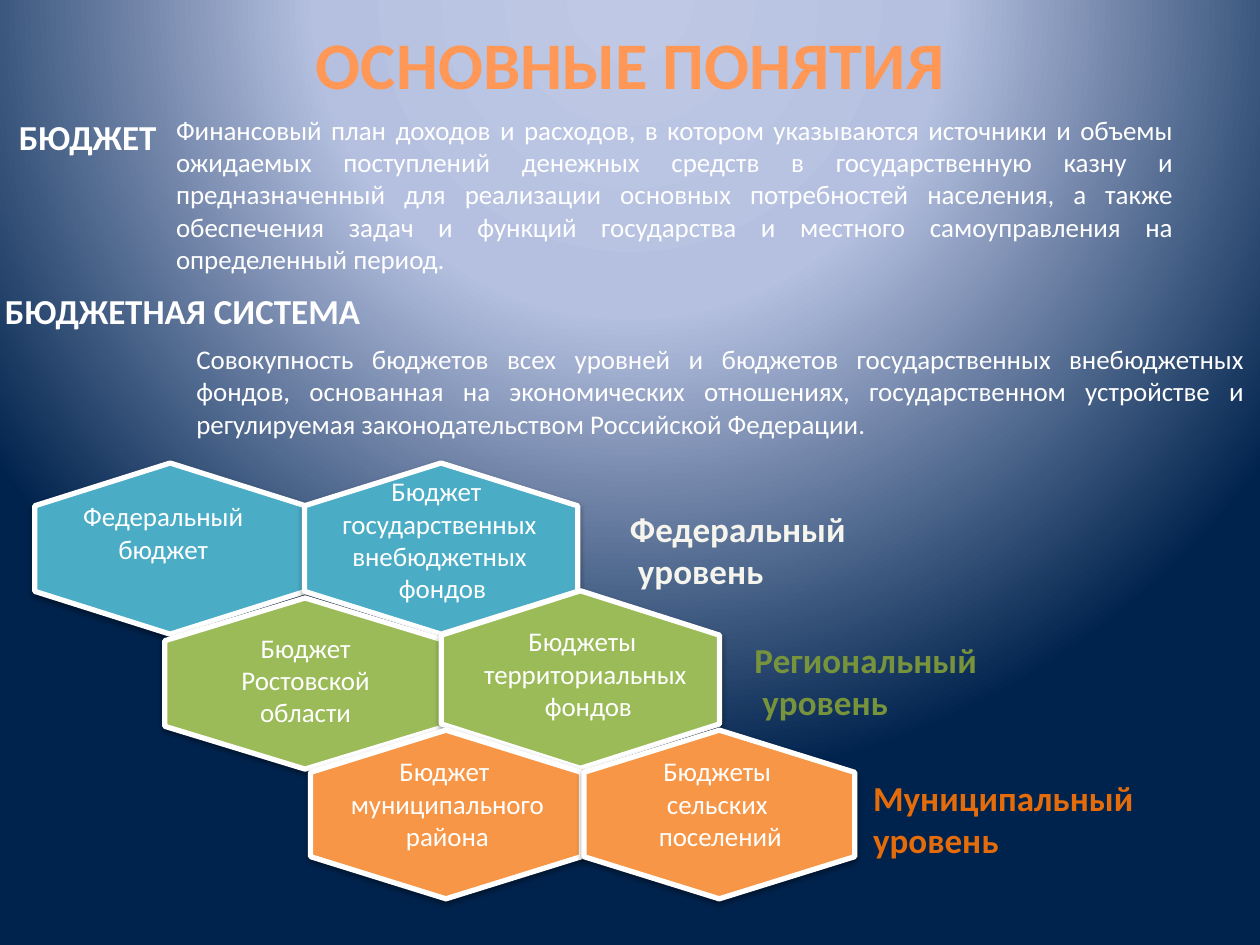
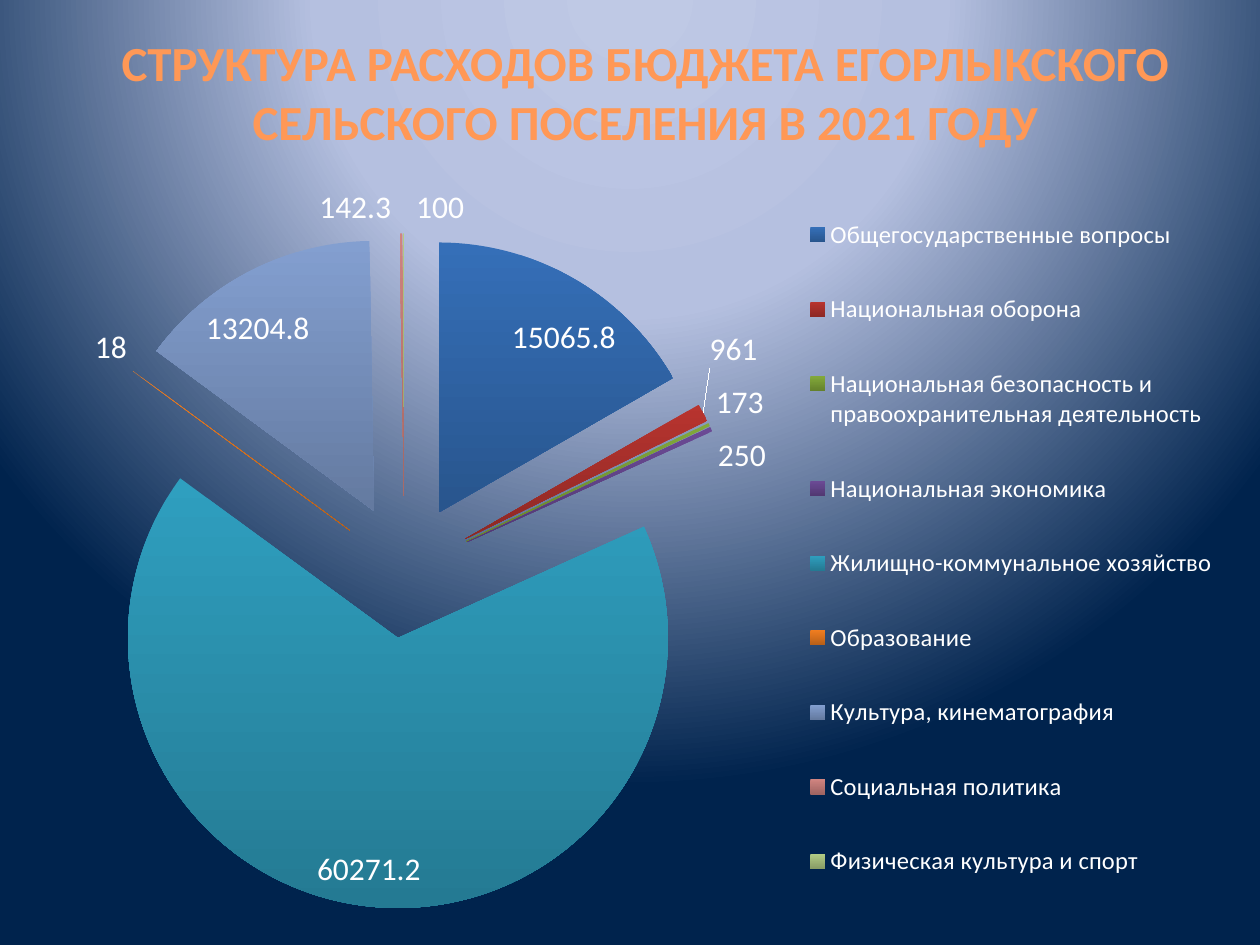
from pptx import Presentation
from pptx.chart.data import CategoryChartData
from pptx.dml.color import RGBColor as RGB
from pptx.enum.chart import XL_CHART_TYPE as Kind, XL_LABEL_POSITION as Spot
from pptx.enum.chart import XL_LEGEND_POSITION as Side
from pptx.enum.shapes import MSO_SHAPE as Form
from pptx.enum.text import MSO_ANCHOR as Anchor, MSO_AUTO_SIZE as Fit
from pptx.enum.text import PP_ALIGN as Align
from pptx.oxml import parse_xml
from pptx.oxml.ns import nsdecls
from pptx.util import Cm, Pt

FONT = "Calibri"
BODY, HEAD = 15.4, 20
WHITE = RGB(0xFF, 0xFF, 0xFF)
PALE = RGB(0xF2, 0xF2, 0xF2)
CREAM = RGB(0xF5, 0xF4, 0xED)
TEAL = RGB(0x4B, 0xAC, 0xC6)
GREEN = RGB(0x9B, 0xBB, 0x59)
ORANGE = RGB(0xF7, 0x96, 0x46)
MOSS = RGB(0x77, 0x93, 0x3C)
RUST = RGB(0xE4, 0x6C, 0x0A)
GLOW = [(0, RGB(0xBF, 0xC9, 0xE5)), (40, RGB(0xB5, 0xC0, 0xE0)),
        (100, RGB(0x00, 0x23, 0x4D))]
FLAME = [(0, RGB(0x9D, 0x47, 0x00)), (78, RGB(0xFF, 0x98, 0x56)),
         (100, RGB(0xFF, 0xF5, 0xF1))]

# Each level: fill, hexagons (centre, size, text centre, lines),
# then the caption (left, top, width, colour, lines).
LEVELS = [
    (TEAL, [
        ((3.43, 11.06), (5.46, 3.45), (3.29, 10.74),
         ["Федеральный", "бюджет"]),
        ((8.89, 11.06), (5.51, 3.45), (8.86, 10.9),
         ["Бюджет ", "государственных", "внебюджетных", " фондов"])],
     (12.45, 10.11, 4.9, CREAM, ["Федеральный", " уровень"])),
    (GREEN, [
        ((6.15, 13.78), (5.66, 3.45), (6.16, 13.72),
         ["Бюджет", "Ростовской", "области"]),
        ((11.7, 13.7), (5.61, 3.58), (11.8, 13.59),
         ["Бюджеты ", "территориальных", " фондов"])],
     (14.96, 12.75, 5.03, MOSS, ["Региональный", " уровень"])),
    (ORANGE, [
        ((8.99, 16.42), (5.46, 3.4), (9.02, 16.21),
         ["Бюджет ", "муниципального", "района"]),
        ((14.5, 16.42), (5.46, 3.4), (14.52, 16.21),
         ["Бюджеты ", "сельских ", "поселений"])],
     (17.35, 15.52, 5.97, RUST, ["Муниципальный", "уровень"])),
]

# Spending item, amount, colour at the top of its slice
COSTS = [
    ("Общегосударственные вопросы", 15065.8, RGB(0x35, 0x6F, 0xB8)),
    ("Национальная оборона", 961, RGB(0xB8, 0x34, 0x2F)),
    ("Национальная безопасность и правоохранительная деятельность", 173,
     RGB(0x82, 0xA8, 0x3A)),
    ("Национальная экономика", 250, RGB(0x6B, 0x4A, 0x95)),
    ("Жилищно-коммунальное хозяйство", 60271.2, RGB(0x2F, 0x9F, 0xBF)),
    ("Образование ", 18, RGB(0xF0, 0x7D, 0x20)),
    ("Культура, кинематография", 13204.8, RGB(0x83, 0x9F, 0xD0)),
    ("Социальная политика", 142.3, RGB(0xD0, 0x84, 0x80)),
    ("Физическая культура и спорт", 100, RGB(0xB2, 0xCC, 0x85)),
]


def blend(stops, tail):
    """Gradient fill element; tail gives its direction."""
    marks = "".join(f'<a:gs pos="{at * 1000}"><a:srgbClr val="{tint}"/></a:gs>'
                    for at, tint in stops)
    return parse_xml(f'<a:gradFill rotWithShape="1" {nsdecls("a")}>'
                     f'<a:gsLst>{marks}</a:gsLst>{tail}</a:gradFill>')


def paint(master):
    """Give every slide the same radial background."""
    master.background.fill.solid()
    old = master.element.xpath(".//p:bgPr/a:solidFill")[0]
    old.getparent().replace(old, blend(
        GLOW, '<a:path path="circle"><a:fillToRect l="50000" t="-80000" '
              'r="50000" b="180000"/></a:path>'))


def write(par, text, size, color=None, bold=None):
    run = par.add_run()
    run.text = text
    font = run.font
    font.name, font.size, font.bold = FONT, Pt(size), bold
    if color is not None:
        font.fill.solid()
        font.fill.fore_color.rgb = color
    return run


def title(slide, text, size, left, top, width, height):
    head = slide.shapes.title
    head.left, head.top = Cm(left), Cm(top)
    head.width, head.height = Cm(width), Cm(height)
    frame = head.text_frame
    frame.auto_size = Fit.NONE
    frame.vertical_anchor = Anchor.MIDDLE
    par = frame.paragraphs[0]
    par.alignment = Align.CENTER
    run = write(par, text, size, bold=True)
    run.font._element.insert(
        0, blend(FLAME, '<a:lin ang="5400000" scaled="0"/>'))


def tall(count, size):
    """Height in cm of a text box with this many lines."""
    return count * size * 0.043 + 0.25


def block(slide, left, top, width, lines, size=BODY, color=WHITE,
          bold=None, align=Align.LEFT, wrap=False, rows=None):
    box = slide.shapes.add_textbox(Cm(left), Cm(top), Cm(width),
                                   Cm(tall(rows or len(lines), size)))
    frame = box.text_frame
    frame.word_wrap = wrap
    frame.auto_size = Fit.SHAPE_TO_FIT_TEXT
    for i, line in enumerate(lines):
        par = frame.add_paragraph() if i else frame.paragraphs[0]
        par.alignment = align
        write(par, line, size, color, bold)
    return frame


def cell(slide, fill, mid, size, spot, lines):
    """Upright hexagon, with its text centred on spot."""
    (x, y), (wide, high) = mid, size
    hexa = slide.shapes.add_shape(Form.HEXAGON, Cm(x - high / 2),
                                  Cm(y - wide / 2), Cm(high), Cm(wide))
    hexa.rotation = 90
    hexa.fill.solid()
    hexa.fill.fore_color.rgb = fill
    hexa.line.color.rgb = WHITE
    hexa.line.width = Pt(3)
    hexa.shadow.inherit = False
    hexa.element.xpath("./p:spPr/a:effectLst")[0].append(parse_xml(
        f'<a:outerShdw {nsdecls("a")} blurRad="40000" dist="20000" '
        'dir="5400000" rotWithShape="0"><a:srgbClr val="000000">'
        '<a:alpha val="38000"/></a:srgbClr></a:outerShdw>'))
    width = 5.4
    block(slide, spot[0] - width / 2, spot[1] - tall(len(lines), BODY) / 2,
          width, lines, align=Align.CENTER)


def place(x, y, w, h, inner=False):
    """Manual chart layout, in shares of the chart area."""
    target = '<c:layoutTarget val="inner"/>' if inner else ""
    return parse_xml(
        f'<c:layout {nsdecls("c")}><c:manualLayout>{target}'
        '<c:xMode val="edge"/><c:yMode val="edge"/>'
        f'<c:x val="{x}"/><c:y val="{y}"/><c:w val="{w}"/><c:h val="{h}"/>'
        '</c:manualLayout></c:layout>')


def shade(color):
    return RGB(*(int(part * 0.77) for part in color))


def pie(slide, left, top, width, height):
    data = CategoryChartData()
    data.categories = [name for name, _, _ in COSTS]
    data.add_series("Series 1", [cost for _, cost, _ in COSTS])
    chart = slide.shapes.add_chart(Kind.PIE, Cm(left), Cm(top), Cm(width),
                                   Cm(height), data).chart
    chart.has_title = False
    font = chart.font
    font.name, font.size, font.color.rgb = FONT, Pt(18), WHITE

    chart.has_legend = True
    key = chart.legend
    key.position = Side.RIGHT
    key.include_in_layout = False
    key.font.name, key.font.size, key.font.color.rgb = FONT, Pt(14), WHITE

    root = chart.element
    root.xpath(".//c:legend/c:legendPos")[0].addnext(
        place(0.63, 0.01, 0.35, 0.98))
    area = root.xpath(".//c:plotArea")[0]
    for old in area.xpath("./c:layout"):
        area.remove(old)
    area.insert(0, place(0.05, 0.08, 0.54, 0.9, inner=True))
    root.xpath(".//c:ser/c:tx")[0].addnext(
        parse_xml(f'<c:explosion {nsdecls("c")} val="25"/>'))

    chart.plots[0].vary_by_categories = True
    ser = chart.plots[0].series[0]
    for i, (_, _, color) in enumerate(COSTS):
        fill = ser.points[i].format.fill
        fill.gradient()
        fill.gradient_angle = 270
        for stop, tint in zip(fill.gradient_stops, (color, shade(color))):
            stop.color.rgb = tint
    tags = ser.data_labels
    tags.show_value = True
    tags.position = Spot.BEST_FIT


def ideas(slide):
    title(slide, "ОСНОВНЫЕ ПОНЯТИЯ", 38, 0.71, 0.33, 24, 1.88)
    block(slide, 3.3, 2.16, 20.6, [
        "Финансовый план доходов и расходов, в котором указываются источники "
        "и объемы ожидаемых поступлений денежных средств в государственную "
        "казну и предназначенный для реализации основных потребностей "
        "населения, а также обеспечения задач и функций государства и "
        "местного самоуправления на определенный период."],
        align=Align.JUSTIFY, wrap=True, rows=5)
    block(slide, 0.13, 2.21, 3.3, ["БЮДЖЕТ"], HEAD, bold=True)
    frame = block(slide, 3.71, 6.78, 21.62, [
        "Совокупность бюджетов всех уровней и бюджетов государственных "
        "внебюджетных фондов, основанная на экономических отношениях, "
        "государственном устройстве и регулируемая законодательством "
        "Российской Федерации"], align=Align.JUSTIFY, wrap=True, rows=3)
    write(frame.paragraphs[0], ".", BODY, PALE)
    block(slide, -0.15, 5.72, 7.75, ["БЮДЖЕТНАЯ СИСТЕМА"], HEAD, bold=True)
    for fill, cells, _ in LEVELS:
        for item in cells:
            cell(slide, fill, *item)
    for _, _, (left, top, width, color, lines) in LEVELS:
        block(slide, left, top, width, lines, HEAD, color, bold=True)


def costs(slide):
    title(slide, "СТРУКТУРА РАСХОДОВ БЮДЖЕТА ЕГОРЛЫКСКОГО СЕЛЬСКОГО "
          "ПОСЕЛЕНИЯ В 2021 ГОДУ", 28, 2.11, 0.53, 21.79, 2.64)
    pie(slide, 0.1, 3.38, 25.2, 15.34)


def main():
    deck = Presentation()
    deck.slide_width, deck.slide_height = Cm(25.4), Cm(19.05)
    paint(deck.slide_master)
    plain = deck.slide_layouts[5]
    for fill in (ideas, costs):
        fill(deck.slides.add_slide(plain))
    deck.save("out.pptx")


if __name__ == "__main__":
    main()
